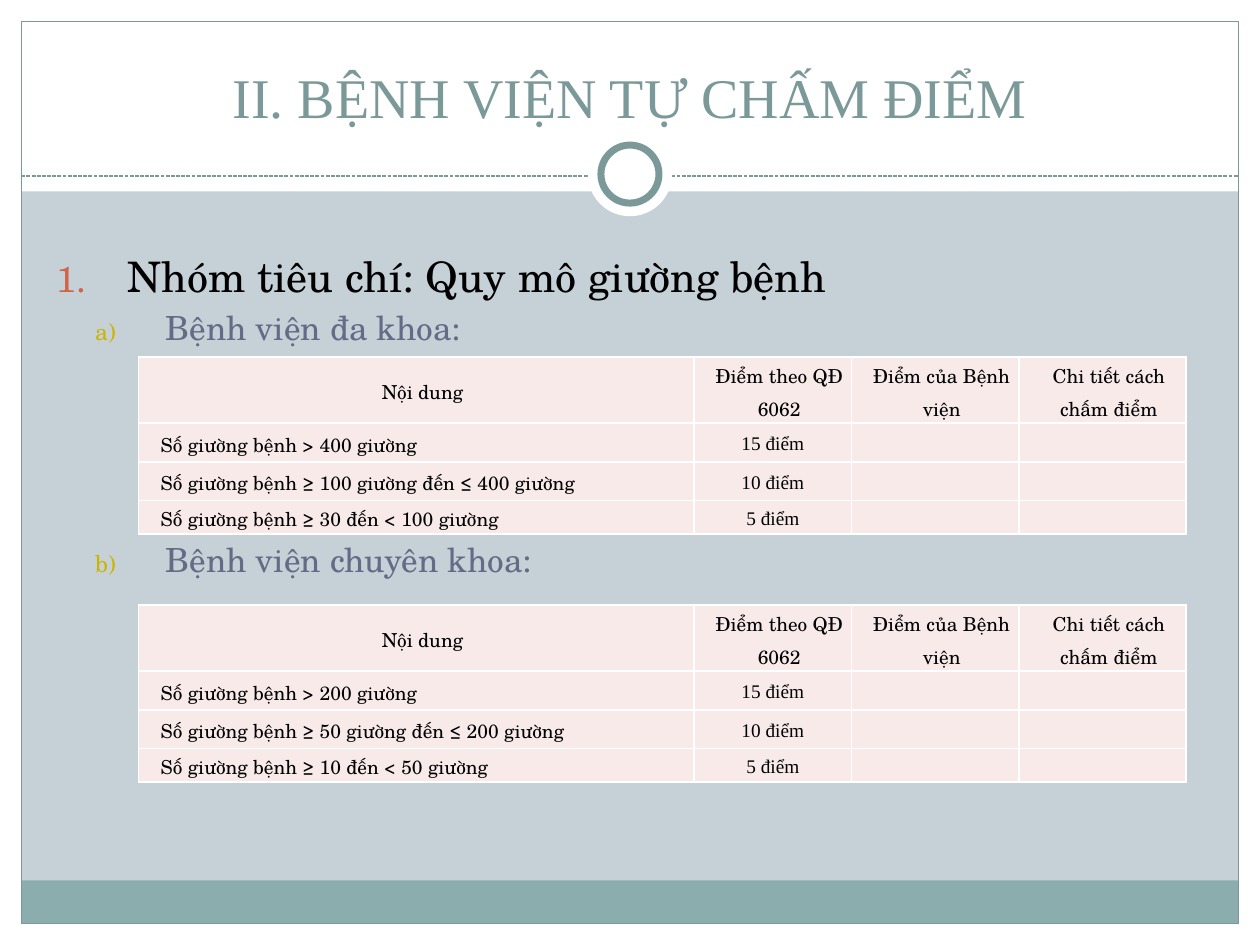
from lxml.etree import SubElement
from pptx import Presentation
from pptx.dml.color import RGBColor
from pptx.enum.dml import MSO_LINE_DASH_STYLE as DASH
from pptx.enum.shapes import MSO_CONNECTOR, MSO_SHAPE
from pptx.enum.text import MSO_ANCHOR, PP_ALIGN
from pptx.oxml.ns import qn
from pptx.util import Cm, Pt

COLORS = {
    "background": "C5D1D7", "white": "FFFFFF", "band": "8CADAE",
    "accent": "7C999A", "black": "000000", "subheading": "646B86",
    "number": "D16349", "letter": "CCB400", "cell": "F7EAE9",
}
SCHOLA, TIMES = "TeX Gyre Schola", "Times New Roman"
WIDTH, HEIGHT = 25.4, 19.05
MARGIN = 0.43
HEADER = ["Nội dung", "Điểm theo QĐ 6062", "Điểm của Bệnh viện",
          "Chi tiết cách chấm điểm"]
SCORES = ["15 điểm", "10 điểm", "5 điểm"]
GENERAL = ["Số giường bệnh > 400 giường",
           "Số giường bệnh ≥ 100 giường đến ≤ 400 giường",
           "Số giường bệnh ≥ 30 đến < 100 giường"]
SPECIALIST = ["Số giường bệnh > 200 giường",
              "Số giường bệnh ≥ 50 giường đến ≤ 200 giường",
              "Số giường bệnh ≥ 10 đến < 50 giường"]
COLUMNS = [11.2, 3.18, 3.37, 3.37]
ROWS = [1.33, 0.78, 0.78, 0.67]


def rgb(name):
    return RGBColor.from_string(COLORS[name])


def add_run(p, text, size, font, color):
    r = p.add_run()
    r.text = text
    r.font.size = Pt(size)
    r.font.name = font
    r.font.color.rgb = rgb(color)


def add_panel(slide, kind, x, y, w, h, fill=None, line=None, weight=0.75):
    sp = slide.shapes.add_shape(kind, Cm(x), Cm(y), Cm(w), Cm(h))
    sp.shadow.inherit = False
    if fill:
        sp.fill.solid()
        sp.fill.fore_color.rgb = rgb(fill)
    else:
        sp.fill.background()
    if line:
        sp.line.color.rgb = rgb(line)
        sp.line.width = Pt(weight)
    else:
        sp.line.fill.background()


def add_text_box(slide, x, y, w, h, anchor):
    tf = slide.shapes.add_textbox(Cm(x), Cm(y), Cm(w), Cm(h)).text_frame
    tf.word_wrap = True
    tf.vertical_anchor = anchor
    return tf


def add_frame(slide, x, y, w, h):
    """White margins, header area, footer band and outline of the slide."""
    rect = MSO_SHAPE.RECTANGLE
    inner_w, inner_h = w - 2 * MARGIN, h - 2 * MARGIN
    add_panel(slide, rect, x, y + h - MARGIN, w, MARGIN, "white")
    add_panel(slide, rect, x, y, w, 3.86, "white")
    for left in (x, x + w - MARGIN):
        add_panel(slide, rect, left, y, MARGIN, h, "white")
    add_panel(slide, rect, x + MARGIN, y + 17.75, inner_w, 0.87, "band")
    add_panel(slide, rect, x + MARGIN, y + MARGIN, inner_w, inner_h,
              line="accent")


def add_divider(slide, x, y, w):
    """Dashed line with a ring at its middle."""
    line = slide.shapes.add_connector(MSO_CONNECTOR.STRAIGHT, Cm(x), Cm(y),
                                      Cm(x + w), Cm(y))
    line.line.color.rgb = rgb("accent")
    line.line.width = Pt(0.75)
    line.line.dash_style = DASH.SQUARE_DOT
    SubElement(line._element.spPr, qn("a:effectLst"))
    center_x, center_y = x + w / 2, y - 0.04
    for size, color in ((1.7, None), (1.17, "accent")):
        add_panel(slide, MSO_SHAPE.OVAL, center_x - size / 2,
                  center_y - size / 2, size, size, "white", color, 4)


def add_title(slide, x, y, w, h):
    p = add_text_box(slide, x, y, w, h, MSO_ANCHOR.BOTTOM).paragraphs[0]
    p.alignment = PP_ALIGN.CENTER
    add_run(p, "II. BỆNH VIỆN TỰ CHẤM ĐIỂM", 32, TIMES, "accent")


def set_numbering(p, scheme, start, color, percent, indent):
    pPr = p._p.get_or_add_pPr()
    pPr.set("marL", str(Cm(indent)))
    pPr.set("indent", str(-Cm(1.42)))
    bullet_color = SubElement(pPr, qn("a:buClr"))
    SubElement(bullet_color, qn("a:srgbClr"), val=COLORS[color])
    SubElement(pPr, qn("a:buSzPct"), val=str(percent * 1000))
    SubElement(pPr, qn("a:buFont"), typeface=SCHOLA)
    SubElement(pPr, qn("a:buAutoNum"), type=scheme, startAt=str(start))


def add_outline(slide, x, y, w, h):
    tf = add_text_box(slide, x, y, w, h, MSO_ANCHOR.TOP)
    p = tf.paragraphs[0]
    p.space_before = Pt(5)
    set_numbering(p, "arabicPeriod", 1, "number", 85, 1.43)
    add_run(p, "Nhóm tiêu chí: Quy mô giường bệnh", 24, SCHOLA, "black")
    subheadings = [("Bệnh viện đa khoa:", 3.5), ("Bệnh viện chuyên khoa:", 110)]
    for start, (text, gap) in enumerate(subheadings, 1):
        p = tf.add_paragraph()
        p.level = 1
        p.space_before = Pt(gap)
        set_numbering(p, "alphaLcParenR", start, "letter", 70, 2.2)
        add_run(p, text, 19, SCHOLA, "subheading")


def style_cell(cell, side_margin):
    cell.vertical_anchor = MSO_ANCHOR.MIDDLE
    cell.margin_left = cell.margin_right = Cm(side_margin)
    cell.margin_top = cell.margin_bottom = 0
    tcPr = cell._tc.get_or_add_tcPr()
    for side in ("lnL", "lnR", "lnT", "lnB"):
        border = SubElement(tcPr, qn(f"a:{side}"), w=str(Pt(1)))
        fill = SubElement(border, qn("a:solidFill"))
        SubElement(fill, qn("a:srgbClr"), val=COLORS["white"])
    cell.fill.solid()
    cell.fill.fore_color.rgb = rgb("cell")


def add_score_table(slide, x, y, criteria):
    rows = [HEADER] + [[c, s, "", ""] for c, s in zip(criteria, SCORES)]
    table = slide.shapes.add_table(len(ROWS), len(COLUMNS), Cm(x), Cm(y),
                                   Cm(sum(COLUMNS)), Cm(sum(ROWS))).table
    table.first_row = table.horz_banding = False
    for column, width in zip(table.columns, COLUMNS):
        column.width = Cm(width)
    for row, height in zip(table.rows, ROWS):
        row.height = Cm(height)
    for i, texts in enumerate(rows):
        for j, text in enumerate(texts):
            cell = table.cell(i, j)
            style_cell(cell, 0.19 if j == 0 else 0)
            p = cell.text_frame.paragraphs[0]
            if not text:
                SubElement(p._p, qn("a:endParaRPr"), sz="1100")
                continue
            is_score = i > 0 and j > 0
            p.alignment = PP_ALIGN.CENTER if i == 0 or j else PP_ALIGN.LEFT
            p.line_spacing = 1.15
            p.space_before = p.space_after = Pt(6)
            if not is_score:
                p._p.get_or_add_pPr().set("marL", str(Cm(0.26)))
            add_run(p, text, 11, TIMES if is_score else SCHOLA, "black")


def main():
    prs = Presentation()
    prs.slide_width, prs.slide_height = Cm(WIDTH), Cm(HEIGHT)
    slide = prs.slides.add_slide(prs.slide_layouts[6])
    slide.background.fill.solid()
    slide.background.fill.fore_color.rgb = rgb("background")
    add_frame(slide, 0, 0, WIDTH, HEIGHT)
    add_divider(slide, MARGIN, 3.55, WIDTH - 2 * MARGIN)
    add_title(slide, 0.85, 0.64, 23.7, 2.1)
    add_outline(slide, 0.89, 4.93, 23.62, 12.7)
    for top, criteria in ((7.2, GENERAL), (12.2, SPECIALIST)):
        add_score_table(slide, 2.79, top, criteria)
    prs.save("out.pptx")


if __name__ == "__main__":
    main()
